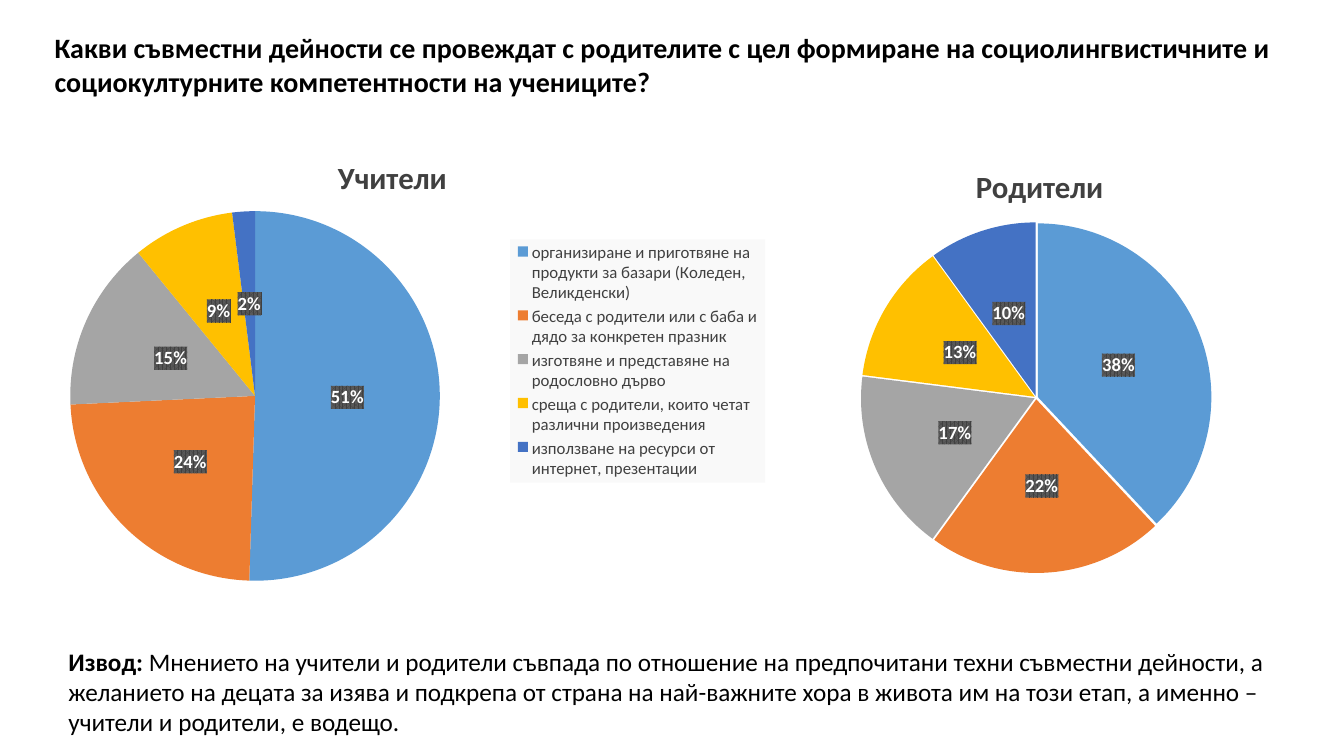
"""Build a slide comparing teachers' and parents' answers in two pie charts."""
from dataclasses import dataclass

from lxml import etree
from pptx import Presentation
from pptx.chart.data import CategoryChartData
from pptx.dml.color import RGBColor
from pptx.enum.chart import XL_CHART_TYPE as ChartType
from pptx.enum.chart import XL_LABEL_POSITION as LabelPosition
from pptx.enum.chart import XL_LEGEND_POSITION as LegendPosition
from pptx.enum.text import MSO_ANCHOR, MSO_AUTO_SIZE, PP_ALIGN
from pptx.oxml import parse_xml
from pptx.oxml.ns import nsdecls, qn
from pptx.util import Cm, Pt


@dataclass(frozen=True)
class Theme:
    font: str = "Calibri"
    text: str = "000000"
    muted: str = "404040"
    label_text: str = "FFFFFF"
    label_stripe: str = "595959"
    legend_fill: str = "F9F9F9"
    slices: tuple = ("5B9BD5", "ED7D31", "A5A5A5", "FFC000", "4472C4")
    heading_size: float = 20
    conclusion_size: float = 18
    chart_title_size: float = 22
    label_size: float = 13.3
    legend_size: float = 12
    chart_size: float = 10


THEME = Theme()
HEADING = (
    "Какви съвместни дейности се провеждат с родителите с цел формиране на "
    "социолингвистичните и социокултурните компетентности на учениците?"
)
CONCLUSION = (
    "Мнението на учители и родители съвпада по отношение на предпочитани техни "
    "съвместни дейности, а желанието на децата за изява и подкрепа от страна на "
    "най-важните хора в живота им на този етап, а именно – учители и родители, е водещо."
)
ACTIVITIES = (
    "организиране и приготвяне на продукти за базари (Коледен, Великденски)",
    "беседа с родители или с баба и дядо за конкретен празник",
    "изготвяне и представяне на родословно дърво",
    "среща с родители, които четат различни произведения",
    "използване на ресурси от интернет, презентации",
)


def style_font(font, size, color, bold=False):
    """Apply the theme typeface with a size, colour and weight."""
    font.name = THEME.font
    font.size = Pt(size)
    font.bold = bold
    font.color.rgb = RGBColor.from_string(color)


def fill_placeholder(shape, box, runs, size):
    """Move a placeholder and write one plain paragraph of (text, bold) runs."""
    shape.left, shape.top, shape.width, shape.height = map(Cm, box)
    frame = shape.text_frame
    frame.word_wrap = True
    frame.auto_size = MSO_AUTO_SIZE.NONE
    frame.vertical_anchor = MSO_ANCHOR.TOP
    paragraph = frame.paragraphs[0]
    paragraph.alignment = PP_ALIGN.LEFT
    paragraph.line_spacing = 1.0
    paragraph.space_before = Pt(0)
    properties = paragraph._p.get_or_add_pPr()
    properties.set("marL", "0")
    properties.set("indent", "0")
    etree.SubElement(properties, qn("a:buNone"))
    for text, bold in runs:
        run = paragraph.add_run()
        run.text = text
        style_font(run.font, size, THEME.text, bold)


def set_layout(parent, index, inner=False, **fractions):
    """Place a chart part by fractions of the chart area."""
    for previous in parent.findall(qn("c:layout")):
        parent.remove(previous)
    target = '<c:layoutTarget val="inner"/>' if inner else ""
    modes = "".join(f'<c:{key}Mode val="edge"/>' for key in "xy")
    values = "".join(f'<c:{key} val="{value}"/>' for key, value in fractions.items())
    parent.insert(index, parse_xml(
        f'<c:layout {nsdecls("c")}><c:manualLayout>{target}{modes}{values}'
        "</c:manualLayout></c:layout>"
    ))


def add_labels(plot):
    """Show centred percentages on a dark pattern."""
    plot.has_data_labels = True
    labels = plot.data_labels
    labels.show_value = True
    labels.number_format = '0"%"'
    labels.number_format_is_linked = False
    labels.position = LabelPosition.CENTER
    style_font(labels.font, THEME.label_size, THEME.label_text, True)
    labels._element.find(qn("c:txPr")).addprevious(parse_xml(
        f'<c:spPr {nsdecls("c", "a")}><a:pattFill prst="pct75">'
        f'<a:fgClr><a:srgbClr val="{THEME.muted}"/></a:fgClr>'
        f'<a:bgClr><a:srgbClr val="{THEME.label_stripe}"/></a:bgClr>'
        "</a:pattFill></c:spPr>"
    ))


def add_pie(slide, box, name, categories, values, title_at, plot_at):
    """Add a titled, labelled pie chart and return it."""
    data = CategoryChartData()
    data.categories = categories
    data.add_series(name, values)
    chart = slide.shapes.add_chart(ChartType.PIE, *map(Cm, box), data).chart
    style_font(chart.font, THEME.chart_size, THEME.text)
    chart.has_legend = False
    chart.has_title = True
    run = chart.chart_title.text_frame.paragraphs[0].add_run()
    run.text = name
    style_font(run.font, THEME.chart_title_size, THEME.muted, True)
    set_layout(chart.chart_title._element, 1, **title_at)
    plot = chart.plots[0]
    plot.vary_by_categories = True
    set_layout(chart._chartSpace.chart.plotArea, 0, inner=True, **plot_at)
    for index, color in enumerate(THEME.slices):
        slice_format = plot.series[0].points[index].format
        slice_format.fill.solid()
        slice_format.fill.fore_color.rgb = RGBColor.from_string(color)
        slice_format.line.fill.background()
    add_labels(plot)
    return chart


def explode(chart, percent):
    """Move all slices apart by a percentage of the radius."""
    series = chart.plots[0].series[0]._element
    series.find(qn("c:dPt")).addprevious(
        parse_xml(f'<c:explosion {nsdecls("c")} val="{percent}"/>')
    )


def add_legend(chart, **place):
    """Add a shaded legend at a fixed place."""
    chart.has_legend = True
    legend = chart.legend
    legend.position = LegendPosition.RIGHT
    legend.include_in_layout = False
    style_font(legend.font, THEME.legend_size, THEME.muted)
    set_layout(legend._element, 1, **place)
    legend._element.find(qn("c:txPr")).addprevious(parse_xml(
        f'<c:spPr {nsdecls("c", "a")}><a:solidFill>'
        f'<a:srgbClr val="{THEME.legend_fill}"/></a:solidFill></c:spPr>'
    ))


def main():
    """Compose and save the slide."""
    presentation = Presentation()
    presentation.slide_width, presentation.slide_height = Cm(33.87), Cm(19.05)
    slide = presentation.slides.add_slide(presentation.slide_layouts[1])
    title, body = slide.placeholders
    fill_placeholder(title, (1.12, 0.64, 31.95, 1.96), [(HEADING, True)], THEME.heading_size)
    fill_placeholder(
        body, (1.47, 16.15, 31.6, 2.57),
        [("Извод: ", True), (CONCLUSION, False)], THEME.conclusion_size,
    )
    parents = add_pie(
        slide, (19.18, 3.45, 13.87, 11.33), "Родители",
        [str(number) for number in range(1, 6)], (38, 22, 17, 13, 10),
        title_at=dict(x=0.38, y=0.05), plot_at=dict(x=0.18, y=0.19, w=0.64, h=0.78),
    )
    explode(parents, 1)
    teachers = add_pie(
        slide, (0, 3.2, 19.48, 11.79), "Учители", ACTIVITIES, (51, 24, 15, 9, 2),
        title_at=dict(x=0.43, y=0.05), plot_at=dict(x=0.09, y=0.18, w=0.48, h=0.79),
    )
    add_legend(teachers, x=0.66, y=0.24, w=0.33, h=0.52)
    presentation.save("out.pptx")


if __name__ == "__main__":
    main()
